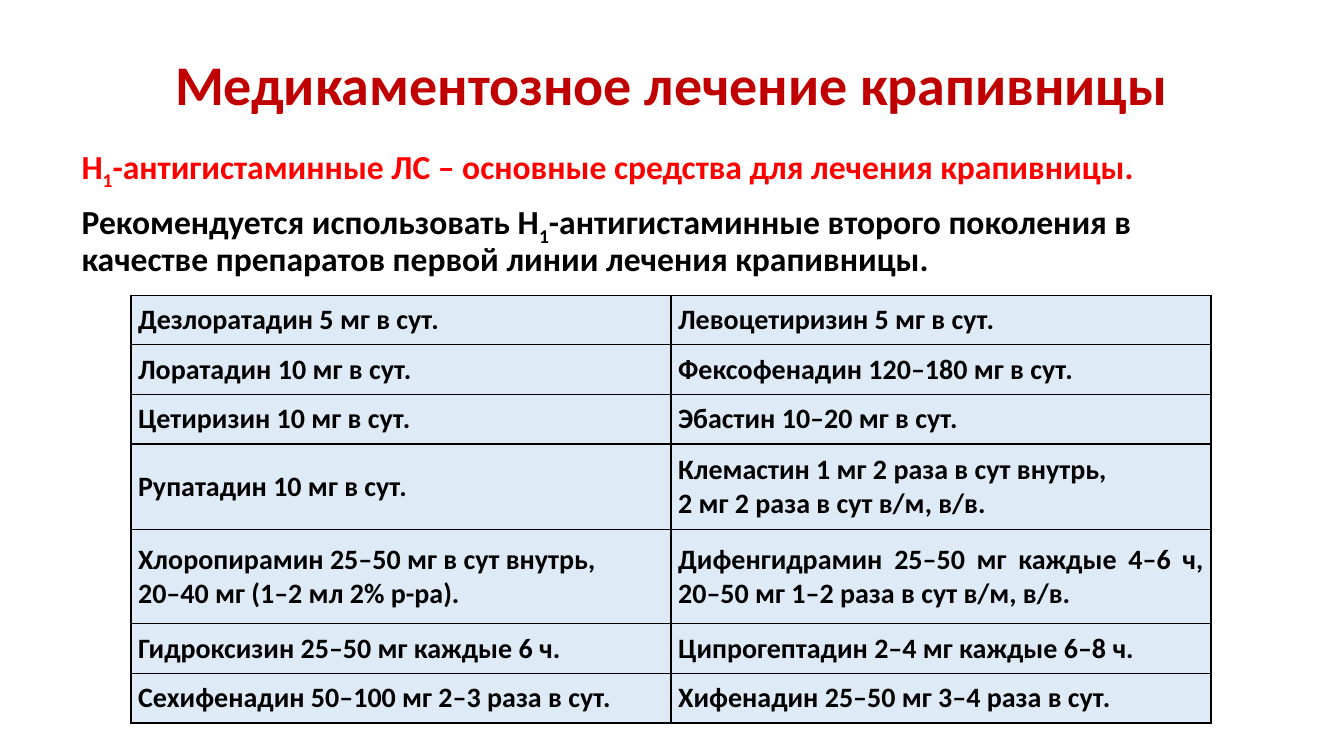
import pptx
import pptx.dml.color
import pptx.enum.text
import pptx.oxml
import pptx.oxml.ns
import pptx.util
from pptx.util import Cm

ALIGN = pptx.enum.text.PP_ALIGN
ANCHOR = pptx.enum.text.MSO_ANCHOR

DARK_RED, RED, BLACK, PALE_BLUE = "C00000", "FF0000", "000000", "DEEBF7"

# Each paragraph: its colour and its runs; "1" is the subscript of Н₁.
STATEMENTS = [
    (RED, ["Н", "1", "-антигистаминные ЛС – основные средства для лечения крапивницы."]),
    (BLACK, ["Рекомендуется использовать Н", "1",
             "-антигистаминные второго поколения в качестве препаратов первой линии "
             "лечения крапивницы."]),
]

# Row height in cm, then the two doses; a line feed starts a new paragraph.
DOSES = [
    (1.25, "Дезлоратадин 5 мг в сут.", "Левоцетиризин 5 мг в сут."),
    (1.25, "Лоратадин 10 мг в сут.", "Фексофенадин 120–180 мг в сут."),
    (1.25, "Цетиризин 10 мг в сут.", "Эбастин 10–20 мг в сут."),
    (2.16, "Рупатадин 10 мг в сут.",
     "Клемастин 1 мг 2 раза в сут внутрь,\n2 мг 2 раза в сут в/м, в/в."),
    (2.37, "Хлоропирамин 25–50 мг в сут внутрь,\n20–40 мг (1–2 мл 2% р-ра).",
     "Дифенгидрамин 25–50 мг каждые 4–6 ч, 20–50 мг 1–2 раза в сут в/м, в/в."),
    (1.25, "Гидроксизин 25–50 мг каждые 6 ч.", "Ципрогептадин 2–4 мг каждые 6–8 ч."),
    (1.25, "Сехифенадин 50–100 мг 2–3 раза в сут.", "Хифенадин 25–50 мг 3–4 раза в сут."),
]


def rgb(color):
    return pptx.dml.color.RGBColor.from_string(color)


def write(paragraph, text, size=20, color=BLACK, subscript=False):
    """Append one bold run to the paragraph."""
    run = paragraph.add_run()
    run.text = text
    run.font.name = "Calibri"
    run.font.size = pptx.util.Pt(size)
    run.font.bold = True
    run.font.color.rgb = rgb(color)
    if subscript:
        run.font._element.set("baseline", "-25000")


def new_paragraph(frame, index):
    return frame.add_paragraph() if index else frame.paragraphs[0]


def place(placeholder, left, top, width, height, anchor):
    placeholder.left, placeholder.top = Cm(left), Cm(top)
    placeholder.width, placeholder.height = Cm(width), Cm(height)
    frame = placeholder.text_frame
    frame.word_wrap = True
    frame.auto_size = pptx.enum.text.MSO_AUTO_SIZE.NONE
    frame.vertical_anchor = anchor
    return frame


def remove_bullet(paragraph):
    properties = paragraph._p.get_or_add_pPr()
    properties.set("marL", "0")
    properties.set("indent", "0")
    properties.append(pptx.oxml.parse_xml(
        f"<a:buNone {pptx.oxml.ns.nsdecls('a')}/>"))


def add_title(slide, text):
    frame = place(slide.shapes.title, 2.31, 1.19, 29.21, 2.03, ANCHOR.MIDDLE)
    heading = frame.paragraphs[0]
    heading.alignment = ALIGN.CENTER
    heading.line_spacing = 0.9
    write(heading, text, size=40, color=DARK_RED)


def add_statements(slide):
    frame = place(slide.placeholders[1], 1.8, 3.56, 30.23, 14.27, ANCHOR.TOP)
    for index, (color, parts) in enumerate(STATEMENTS):
        statement = new_paragraph(frame, index)
        statement.alignment = ALIGN.LEFT
        statement.line_spacing = 0.9
        statement.space_before = pptx.util.Pt(10)
        remove_bullet(statement)
        for part in parts:
            write(statement, part, size=24, color=color, subscript=part == "1")


def add_borders(cell, color, width):
    properties = cell._tc.get_or_add_tcPr()
    for side in "LRTB":
        properties.append(pptx.oxml.parse_xml(
            f'<a:ln{side} {pptx.oxml.ns.nsdecls("a")} w="{pptx.util.Pt(width)}">'
            f'<a:solidFill><a:srgbClr val="{color}"/></a:solidFill></a:ln{side}>'))


def fill_cell(cell, dose):
    add_borders(cell, BLACK, 1)
    cell.fill.solid()
    cell.fill.fore_color.rgb = rgb(PALE_BLUE)
    cell.vertical_anchor = ANCHOR.MIDDLE
    cell.margin_left = cell.margin_right = Cm(0.18)
    cell.margin_top = cell.margin_bottom = 0
    for index, line in enumerate(dose.split("\n")):
        paragraph = new_paragraph(cell.text_frame, index)
        paragraph.alignment = ALIGN.JUSTIFY
        write(paragraph, line)


def add_dose_table(slide):
    total_height = sum(height for height, *_ in DOSES)
    table = slide.shapes.add_table(
        len(DOSES), 2, Cm(3.3), Cm(7.44), Cm(27.22), Cm(total_height)).table
    table.first_row = table.horz_banding = False
    for row, (height, *doses) in zip(table.rows, DOSES):
        row.height = Cm(height)
        for cell, dose in zip(row.cells, doses):
            fill_cell(cell, dose)


def main():
    presentation = pptx.Presentation()
    presentation.slide_width, presentation.slide_height = Cm(33.87), Cm(19.05)
    slide = presentation.slides.add_slide(presentation.slide_layouts[1])
    add_title(slide, "Медикаментозное лечение крапивницы")
    add_statements(slide)
    add_dose_table(slide)
    presentation.save("out.pptx")


if __name__ == "__main__":
    main()
